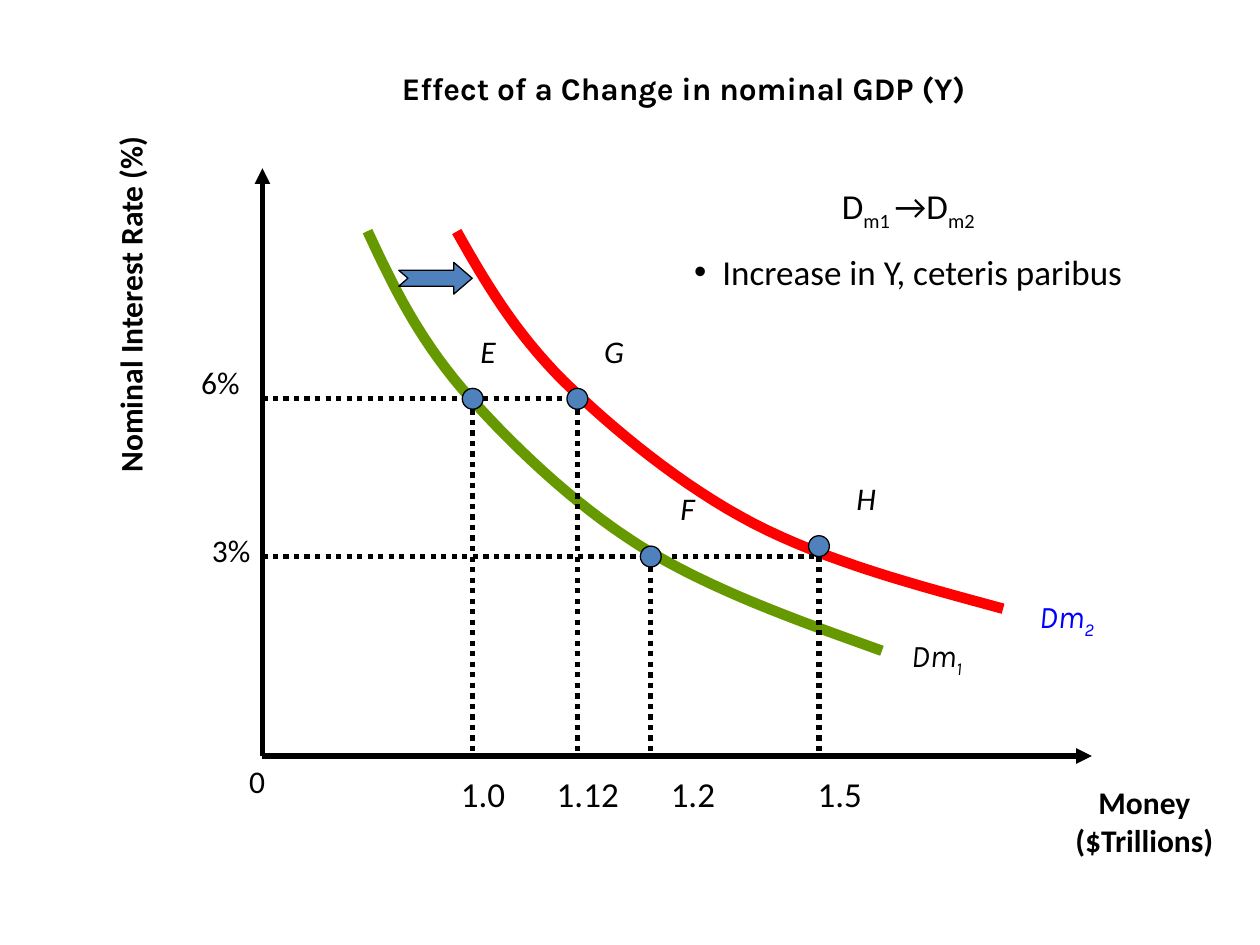
import dataclasses
import typing

import lxml.etree
import pptx
import pptx.dml.color
import pptx.enum.dml
import pptx.enum.shapes
import pptx.enum.text
import pptx.oxml.ns
import pptx.util

Cm = pptx.util.Cm
Pt = pptx.util.Pt
qn = pptx.oxml.ns.qn
Kind = pptx.enum.shapes.MSO_SHAPE

HUES = {"ink": "000000", "paper": "FFFFFF", "green": "669900",
        "red": "FF0000", "blue": "0000FF", "steel": "4F81BD"}


@dataclasses.dataclass
class Run:
    text: str
    sub: bool = False


@dataclasses.dataclass
class Label:
    box: tuple[float, float, float, float]
    runs: list[Run]
    size: int = 18
    font: str = "Calibri"
    hue: str = "ink"
    bold: bool = False
    slant: bool = False
    turn: float = 0
    space: bool = True


class Line(typing.NamedTuple):
    start: tuple[float, float]
    end: tuple[float, float]


class Curve(typing.NamedTuple):
    shift: tuple[float, float]
    turn: float
    hue: str


def tint(name: str) -> pptx.dml.color.RGBColor:
    return pptx.dml.color.RGBColor.from_string(HUES[name])


def draw_line(slide, line: Line, axis: bool) -> None:
    """Draw an axis with an arrowhead, or else a dotted guide."""
    ends = [Cm(n) for n in (*line.start, *line.end)]
    item = slide.shapes.add_connector(pptx.enum.shapes.MSO_CONNECTOR.STRAIGHT, *ends)
    item.line.color.rgb = tint("ink")
    item.line.width = Pt(3)
    if axis:
        lxml.etree.SubElement(item.line._get_or_add_ln(), qn("a:tailEnd"), type="triangle")
    else:
        item.line.dash_style = pptx.enum.dml.MSO_LINE.ROUND_DOT
    lxml.etree.SubElement(item._element.spPr, qn("a:effectLst"))


def trace(knots: list[tuple[float, float]], steps: int = 16) -> list[tuple[int, int]]:
    """Sample a chain of cubic Bezier pieces that share their end knots."""
    spots = [knots[0]]
    for i in range(0, len(knots) - 1, 3):
        a, b, c, d = knots[i:i + 4]
        for k in range(1, steps + 1):
            t = k / steps
            u = 1 - t
            spots.append(tuple(
                u**3 * a[n] + 3 * u * u * t * b[n] + 3 * u * t * t * c[n] + t**3 * d[n]
                for n in (0, 1)))
    return [(Cm(x), Cm(y)) for x, y in spots]


def draw_curve(slide, curve: Curve) -> None:
    dx, dy = curve.shift
    spots = trace([(x + dx, y + dy) for x, y in DEMAND])
    pen = slide.shapes.build_freeform(*spots[0], scale=1.0)
    pen.add_line_segments(spots[1:], close=False)
    item = pen.convert_to_shape()
    item.rotation = curve.turn
    item.shadow.inherit = False
    item.fill.background()
    item.line.color.rgb = tint(curve.hue)
    item.line.width = Pt(6)


def draw_shape(slide, kind, box: tuple[float, float, float, float],
               fill: str, edge: bool = True):
    item = slide.shapes.add_shape(kind, *[Cm(n) for n in box])
    item.shadow.inherit = False
    item.fill.solid()
    item.fill.fore_color.rgb = tint(fill)
    if edge:
        item.line.color.rgb = tint("ink")
        item.line.width = Pt(0.75)
    else:
        item.line.fill.background()
    return item


def write(para, label: Label, runs: list[Run], bullet: bool = False) -> None:
    """Fill one centred paragraph; a newline in a run's text breaks the line."""
    para.alignment = pptx.enum.text.PP_ALIGN.CENTER
    props = para._p.get_or_add_pPr()
    if label.space:
        gap = lxml.etree.SubElement(props, qn("a:spcBef"))
        lxml.etree.SubElement(gap, qn("a:spcPct"), val="50000")
    if bullet:
        props.set("marL", str(Cm(0.57)))
        props.set("indent", str(-Cm(0.57)))
        lxml.etree.SubElement(props, qn("a:buFont"), typeface="Arial")
        lxml.etree.SubElement(props, qn("a:buChar"), char="•")
    for run in runs:
        for i, text in enumerate(run.text.split("\n")):
            if i:
                para.add_line_break()
            part = para.add_run()
            part.text = text
            font = part.font
            font.name, font.size = label.font, Pt(label.size)
            font.bold, font.italic = label.bold, label.slant
            font.color.rgb = tint(label.hue)
            if run.sub:
                font._element.set("baseline", "-25000")


def draw_label(slide, label: Label, item=None):
    """Write the label in the given shape, or in a new text box."""
    item = item or slide.shapes.add_textbox(*[Cm(n) for n in label.box])
    item.rotation = label.turn
    frame = item.text_frame
    frame.word_wrap = True
    frame.auto_size = pptx.enum.text.MSO_AUTO_SIZE.SHAPE_TO_FIT_TEXT
    write(frame.paragraphs[0], label, label.runs)
    return item


LEFT, BASE = 5.29, 15.24
HIGH, LOW = 8.04, 11.22
DOT = 0.42
AXES = [Line((LEFT, BASE), (LEFT, 3.39)), Line((LEFT, BASE), (22.01, BASE))]
DEMAND = [(7.41, 4.66), (7.9, 5.72), (8.41, 6.77), (9.31, 7.83), (10.24, 8.89),
          (11.51, 10.13), (12.91, 11.01), (14.33, 11.89), (16.05, 12.5), (17.78, 13.12)]
CURVES = [Curve((0, 0), 0, "green"), Curve((2.12, -0.42), -4.6, "red")]
LEVELS = [Line((LEFT, HIGH), (9.53, HIGH)), Line((9.74, HIGH), (11.85, HIGH)),
          Line((LEFT, LOW), (13.34, LOW)), Line((13.55, LOW), (16.51, LOW))]
DROPS = [Line((x, y), (x, BASE))
         for x, y in [(9.53, HIGH), (11.64, HIGH), (13.12, LOW), (16.51, LOW)]]
DOTS = [(9.53, HIGH), (11.64, HIGH), (13.12, LOW), (16.51, 11.01)]

TITLE = Label((6.35, 1.27, 15.03, 1.02), [Run("Effect of a Change in nominal GDP (Y) ")],
              font="Karla", bold=True)
NOTE = Label((12.7, 3.6, 11.22, 2.4),
             [Run("D"), Run("m1 ", True), Run("→D"), Run("m2", True)], size=20)
LABELS = [
    Label((-4.66, 5.5, 14.82, 1.27), [Run("Nominal Interest Rate (%)")], bold=True, turn=270),
    Label((20.74, 15.66, 4.66, 2.29), [Run("Money\n($Trillions)")], bold=True),
    Label((4.02, BASE, 2.33, 1.27), [Run("0")]),
    Label((3.6, 10.58, 2.12, 1.27), [Run("3%")]),
    Label((3.6, 7.2, 1.69, 1.27), [Run("6%")]),
]
LABELS += [Label((x, y, 1.48, 1.27), [Run(text)], slant=True, space=text != "F")
           for text, x, y in [("E", 9.1, 6.56), ("G", 11.64, 6.56),
                              ("F", 13.12, 9.74), ("H", 16.72, 9.53)]]
LABELS += [Label((x, 15.45, wide, 1.1), [Run(text)], size=20)
           for text, x, wide in [("1.0", 8.47, 2.54), ("1.12", 10.58, 2.54),
                                 ("1.2", 12.7, 2.54), ("1.5", 15.45, 2.96)]]
LABELS += [Label((x, y, 2.96, 1.02), [Run("Dm"), Run(text, True)],
                 font="Karla", hue=hue, slant=True)
           for text, x, y, hue in [("1", 17.4, 12.7, "ink"), ("2", 20.02, 11.91, "blue")]]


def main() -> None:
    deck = pptx.Presentation()
    deck.slide_width, deck.slide_height = Cm(25.4), Cm(19.05)
    slide = deck.slides.add_slide(deck.slide_layouts[6])

    for line in AXES:
        draw_line(slide, line, axis=True)
    for curve in CURVES:
        draw_curve(slide, curve)
    for line in LEVELS + DROPS:
        draw_line(slide, line, axis=False)
    draw_label(slide, TITLE, draw_shape(slide, Kind.RECTANGLE, TITLE.box, "paper", edge=False))
    for label in LABELS:
        draw_label(slide, label)
    note = draw_label(slide, NOTE)
    write(note.text_frame.add_paragraph(), NOTE,
          [Run("Increase in Y, ceteris paribus")], bullet=True)
    arrow = draw_shape(slide, Kind.NOTCHED_RIGHT_ARROW, (8.04, 5.29, 1.48, 0.64), "steel")
    arrow.adjustments[0], arrow.adjustments[1] = 0.5, 0.58
    for x, y in DOTS:
        draw_shape(slide, Kind.OVAL, (x - DOT / 2, y - DOT / 2, DOT, DOT), "steel")

    deck.save("out.pptx")


if __name__ == "__main__":
    main()
